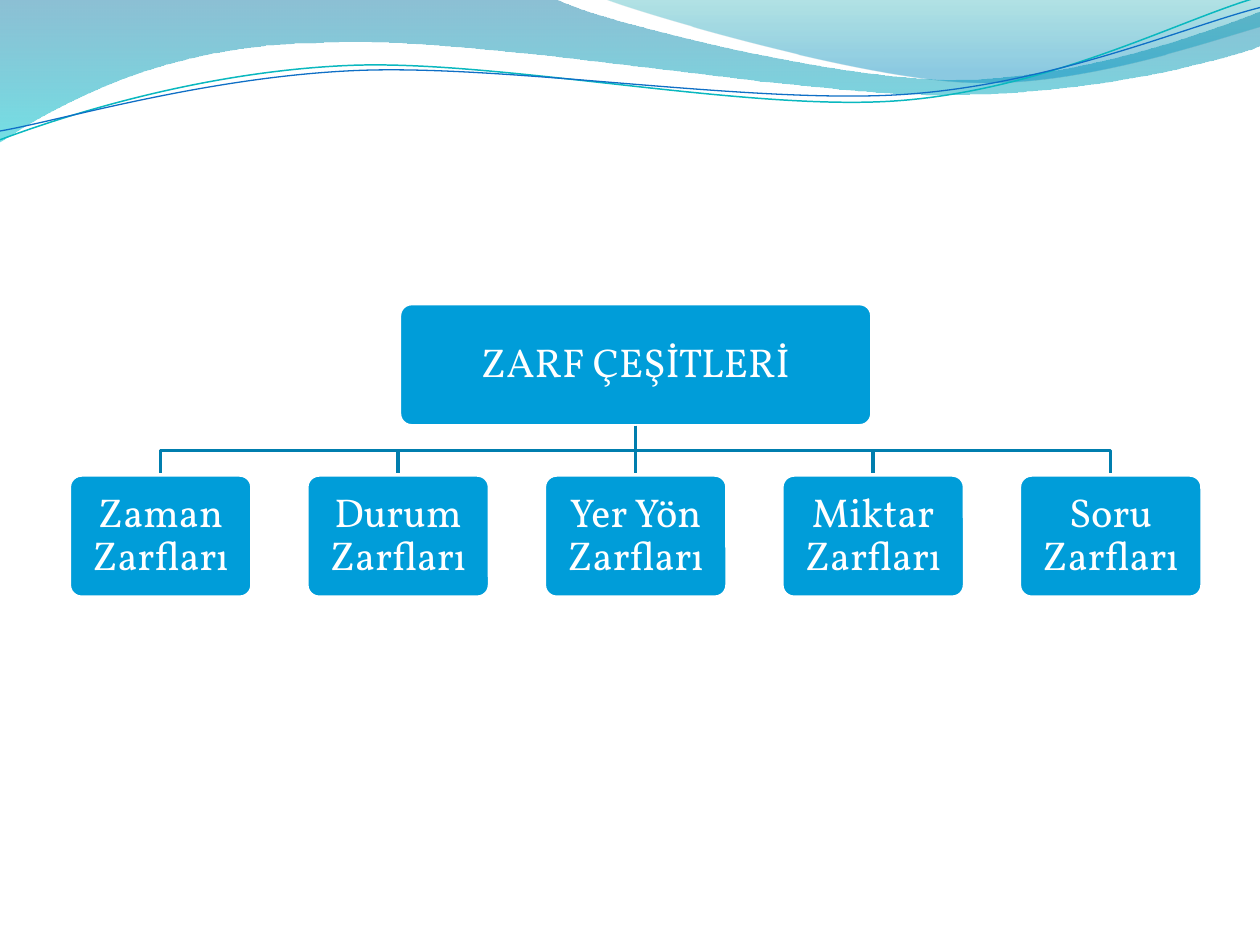
from dataclasses import dataclass
from lxml.etree import SubElement
from pptx import Presentation
from pptx.dml.color import RGBColor
from pptx.enum.shapes import MSO_CONNECTOR, MSO_SHAPE
from pptx.enum.text import MSO_ANCHOR, PP_ALIGN
from pptx.oxml.ns import qn
from pptx.util import Inches, Pt

COLORS = {
    "box": "009DD9", "branch": "007EAE", "white": "FFFFFF",
    "wave_top": "0074A1", "wave_bottom": "00C6CF",
    "crest_top": "00A1A9", "crest_bottom": "008BBF",
    "teal_line": "0AB8BF", "blue_line": "0F6FC6",
}
KINDS = ["Zaman Zarfları", "Durum Zarfları", "Yer Yön Zarfları",
         "Miktar Zarfları", "Soru Zarfları"]
BOX_W, BOX_H = 1.45, 0.97
ROOT_W, ROOT_Y = 3.75, 2.41
ROW_X, ROW_Y = 0.55, 3.77
STEP = (8.09 - ROW_X) / (len(KINDS) - 1)
TEXT_FRAME = {
    "word_wrap": True, "vertical_anchor": MSO_ANCHOR.MIDDLE,
    "margin_left": Inches(0.13), "margin_right": Inches(0.13),
    "margin_top": Inches(0.13), "margin_bottom": Inches(0.13),
}
PARAGRAPH = {"alignment": PP_ALIGN.CENTER, "line_spacing": 0.9}
FONT = {"name": "Vollkorn", "size": Pt(23)}


@dataclass
class Stop:
    """Gradient stop with its opacity in percent."""
    position: float
    color: str
    opacity: int


@dataclass
class Wave:
    """Outline of line (2 values) and cubic (6 values) segments."""
    start: tuple
    segments: list
    stops: tuple = ()
    line: str = ""
    width: float = 0


@dataclass
class Box:
    """Labelled box of the chart."""
    text: str
    x: float
    y: float
    w: float

    @property
    def center(self) -> float:
        """Return the horizontal middle."""
        return self.x + self.w / 2


WAVES = [
    Wave((0, -0.01), [
        (4.4, -0.01), (4.76, 0.17, 6.64, 0.63, 7.58, 0.63),
        (8.53, 0.63, 9.58, 0.26, 10, 0.09), (10.01, 0.36),
        (9.83, 0.44, 8.7, 0.76, 7.46, 0.75),
        (6.22, 0.75, 3.82, 0.28, 2.57, 0.34),
        (1.29, 0.35, 0.46, 0.83, -0.01, 1.13)],
        (Stop(0, "wave_top", 45), Stop(1, "wave_bottom", 55))),
    Wave((4.79, -0.01), [
        (5.09, 0.11, 6.82, 0.62, 7.69, 0.65),
        (8.56, 0.69, 9.61, 0.32, 10, 0.21), (10, 0)],
        (Stop(0, "crest_top", 30), Stop(0.8, "crest_bottom", 45))),
    Wave((0, 1.11), [
        (0.48, 0.93, 1.58, 0.57, 2.77, 0.52),
        (3.95, 0.47, 5.93, 0.89, 7.13, 0.8),
        (8.33, 0.71, 9.38, 0.15, 9.98, -0.02)], line="teal_line", width=0.85),
    Wave((0, 1.04), [
        (0.47, 0.96, 1.64, 0.61, 2.83, 0.56),
        (4.03, 0.51, 5.97, 0.83, 7.17, 0.75),
        (8.36, 0.67, 9.41, 0.21, 10, 0.06)], line="blue_line", width=0.75),
]


def rgb(name: str) -> RGBColor:
    """Return a named colour."""
    return RGBColor.from_string(COLORS[name])


def apply(target, values: dict) -> None:
    """Set each format value on the target."""
    for key, value in values.items():
        setattr(target, key, value)


def set_line(shape, color: str, width: float) -> None:
    """Give a shape or connector a solid line."""
    shape.line.color.rgb = rgb(color)
    shape.line.width = Pt(width)


def add_outline(s, start: tuple, segments: list, close: bool = False):
    """Draw an unfilled freeform of line and cubic segments in inches."""
    points = [(Inches(seg[i]), Inches(seg[i + 1]))
              for seg in segments for i in range(0, len(seg), 2)]
    builder = s.shapes.build_freeform(Inches(start[0]), Inches(start[1]))
    builder.add_line_segments(points, close=close)
    sp = builder.convert_to_shape()
    sp.shadow.inherit = False
    sp.fill.background()
    steps = iter(sp._element.xpath(".//a:path/a:lnTo"))
    for seg in segments:
        nodes = [next(steps) for _ in range(len(seg) // 2)]
        if len(nodes) == 3:
            nodes[0].tag = qn("a:cubicBezTo")
            for node in nodes[1:]:
                nodes[0].append(node[0])
                node.getparent().remove(node)
    return sp


def add_wave(s, wave: Wave) -> None:
    """Draw a gradient wave or a curved line."""
    sp = add_outline(s, wave.start, wave.segments, bool(wave.stops))
    if not wave.stops:
        set_line(sp, wave.line, wave.width)
        return
    sp.line.fill.background()
    sp.fill.gradient()
    sp.fill.gradient_angle = 270
    for gs, stop in zip(sp.fill.gradient_stops, wave.stops):
        gs.position = stop.position
        gs.color.rgb = rgb(stop.color)
    for clr, stop in zip(sp._element.xpath(".//a:gs/a:srgbClr"), wave.stops):
        SubElement(clr, qn("a:alpha")).set("val", str(stop.opacity * 1000))


def add_box(s, box: Box):
    """Draw a rounded box with its label."""
    sp = s.shapes.add_shape(MSO_SHAPE.ROUNDED_RECTANGLE, Inches(box.x),
                            Inches(box.y), Inches(box.w), Inches(BOX_H))
    sp.adjustments[0] = 0.1
    sp.shadow.inherit = False
    sp.fill.solid()
    sp.fill.fore_color.rgb = rgb("box")
    set_line(sp, "white", 2)
    tf = sp.text_frame
    apply(tf, TEXT_FRAME)
    p = tf.paragraphs[0]
    apply(p, PARAGRAPH)
    r = p.add_run()
    r.text = box.text
    apply(r.font, FONT)
    r.font.color.rgb = rgb("white")
    return sp


def add_child(s, root: Box, root_sp, box: Box) -> None:
    """Draw a branch from the root and the box at its end."""
    x, top = root.center, root.y + BOX_H
    if abs(x - box.center) < 0.01:
        cx = s.shapes.add_connector(MSO_CONNECTOR.STRAIGHT, Inches(x), Inches(top),
                                    Inches(box.center), Inches(box.y))
        set_line(cx, "branch", 2)
        SubElement(cx._element.spPr, qn("a:effectLst"))
        cx.begin_connect(root_sp, 2)
        cx.end_connect(add_box(s, box), 0)
        return
    mid = (top + box.y) / 2
    sp = add_outline(s, (x, top), [(x, mid), (box.center, mid), (box.center, box.y)])
    set_line(sp, "branch", 2)
    add_box(s, box)


def main() -> None:
    """Build the slide and save it."""
    prs = Presentation()
    prs.slide_width, prs.slide_height = Inches(10), Inches(7.5)
    s = prs.slides.add_slide(prs.slide_layouts[6])
    for wave in WAVES:
        add_wave(s, wave)
    children = [Box(text, ROW_X + i * STEP, ROW_Y, BOX_W) for i, text in enumerate(KINDS)]
    root = Box("ZARF ÇEŞİTLERİ", children[2].center - ROOT_W / 2, ROOT_Y, ROOT_W)
    root_sp = add_box(s, root)
    for child in children:
        add_child(s, root, root_sp, child)
    prs.save("out.pptx")


if __name__ == "__main__":
    main()
